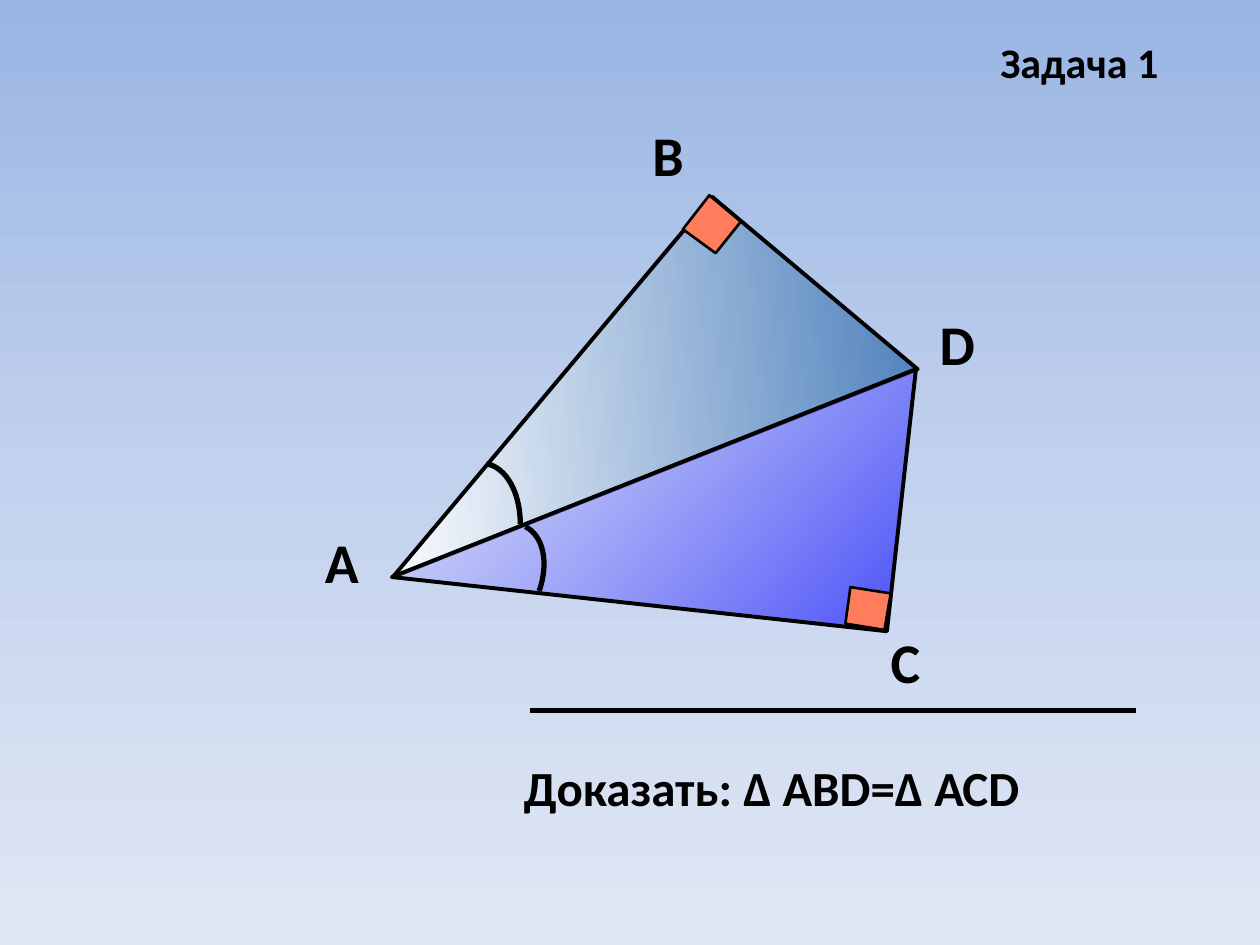
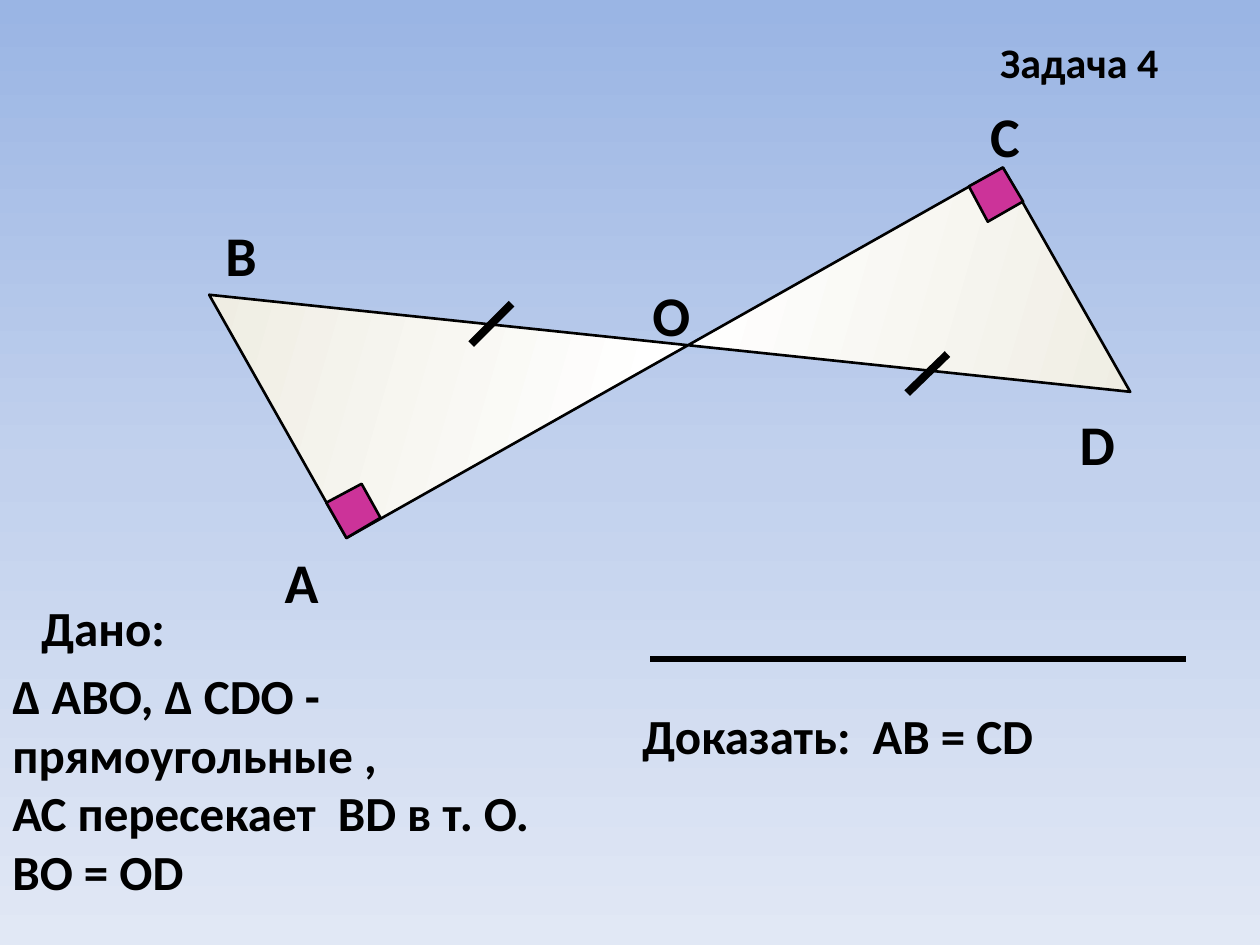
from lxml.etree import SubElement as Sub
from pptx import Presentation
from pptx.dml.color import RGBColor as Rgb
from pptx.enum.shapes import MSO_CONNECTOR as Link, MSO_SHAPE as Form
from pptx.oxml.ns import qn
from pptx.util import Inches, Pt

HUES = {
    "ink": "000000", "white": "FFFFFF", "steel": "4F81BD", "blue": "0000FF",
    "coral": "FF7C5D", "plum": "CC3399", "cream": "EEECE1",
    "sky": "9AB5E4", "mist": "C2D1ED", "pale": "E1E8F5",
}
FONT = "Calibri"
BIG, MID, SMALL = 32, 28, 24

# Grid of 100 columns by 75 rows
COLS, ROWS = 100, 75
deck = Presentation()
deck.slide_width, deck.slide_height = Inches(10), Inches(7.5)
UNIT = deck.slide_width // COLS

# Gradients: angle, then stops of place, colour and opacity in percent
SHADES = {
    "page": (90, [(0, "sky", 100), (50, "mist", 100), (100, "pale", 100)]),
    "upper": (45, [(0, "steel", 100), (100, "white", 100)]),
    "lower": (45, [(0, "white", 51), (100, "blue", 64)]),
    "bow": (16, [(0, "cream", 100), (50, "white", 100), (100, "cream", 100)]),
}


def write(page, text, col, row, wide, high, size=BIG, wrap=False):
    box = page.shapes.add_textbox(*[round(n * UNIT) for n in (col, row, wide, high)])
    frame = box.text_frame
    frame.word_wrap = wrap
    for i, line in enumerate(text.split("\n")):
        para = frame.paragraphs[0] if i == 0 else frame.add_paragraph()
        run = para.add_run()
        run.text = line
        run.font.name, run.font.size, run.font.bold = FONT, Pt(size), True
        run.font.color.rgb = Rgb.from_string(HUES["ink"])


def shade(props, name):
    """Swap the solid fill of a property element for a named gradient."""
    angle, stops = SHADES[name]
    solid = props.find(qn("a:solidFill"))
    grad = props.makeelement(qn("a:gradFill"), {"rotWithShape": "1"})
    props.replace(solid, grad)
    group = Sub(grad, qn("a:gsLst"))
    for place, hue, alpha in stops:
        stop = Sub(group, qn("a:gs"), pos=str(place * 1000))
        tint = Sub(stop, qn("a:srgbClr"), val=HUES[hue])
        if alpha < 100:
            Sub(tint, qn("a:alpha"), val=str(alpha * 1000))
    Sub(grad, qn("a:lin"), ang=str(angle * 60000), scaled="0")


# Angle marks: points along two Bezier curves
curves = [
    [(38.6, 36.8), (40.2, 37.1), (41.3, 39.1), (41.3, 41.6)],
    [(41.7, 41.8), (43.1, 42.5), (43.6, 44.6), (42.8, 46.9)],
]
STEPS = 16
arcs = []
for curve in curves:
    arc = []
    for step in range(STEPS + 1):
        t = step / STEPS
        mix = ((1 - t) ** 3, 3 * t * (1 - t) ** 2, 3 * t * t * (1 - t), t ** 3)
        arc.append([sum(m * p[axis] for m, p in zip(mix, curve)) for axis in (0, 1)])
    arcs.append(arc)

# Outlines: points, fill (None leaves the outline open), line width
# Labels: letter, column, row; lines: two ends, line width
tasks = [
    {
        "title": "Задача 1", "span": 16.9,
        "outlines": [
            ([(31.1, 45.8), (72.7, 29.3), (70.4, 50.1)], "lower", 2.25),
            (arcs[0], None, 3),
            (arcs[1], None, 3),
            ([(56.3, 15.5), (58.8, 17.6), (56.8, 20.1), (54.2, 18.2)], "coral", 1.5),
            ([(67.5, 46.6), (70.7, 47.1), (70.2, 50), (67.1, 49.5)], "coral", 1.5),
        ],
        "labels": [("А", 24.8, 41.4), ("В", 50.8, 9.1), ("С", 69.7, 49.3), ("D", 73.6, 24.1)],
        "lines": [(42.1, 56.4, 90.2, 56.4, 3)],
        "goal": ("Доказать: Δ АВD=Δ АСD", 40.6, 59.6, 41.8, 5.7),
    },
    {
        "title": "Задача 4", "span": 14.7,
        "outlines": [
            ([(27.5, 42.7), (79.6, 13.3), (89.7, 31.1), (16.6, 23.4)], "bow", 1.5),
            ([(25.9, 39.9), (28.7, 38.4), (30.2, 41.1), (27.5, 42.7)], "plum", 1.5),
            ([(76.9, 14.8), (78.4, 17.6), (81.2, 16), (79.6, 13.3)], "plum", 1.5),
        ],
        "labels": [("А", 21.6, 43), ("В", 16.9, 17), ("С", 77.6, 7.6),
                   ("D", 84.7, 32), ("О", 50.8, 21.8)],
        "lines": [(40.6, 24.1, 37.4, 27.3, 4.5), (75.2, 28.1, 72, 31.2, 4.5),
                  (51.6, 52.3, 94.1, 52.3, 3)],
        "goal": ("Доказать:  АВ = СD", 50, 55.5, 34.3, 5.7),
    },
]

pages = []
for task in tasks:
    page = deck.slides.add_slide(deck.slide_layouts[6])
    pages.append(page)
    page.background.fill.solid()
    shade(next(page.element.iter(qn("p:bgPr"))), "page")

    parts = []
    if task is tasks[0]:
        place = [round(n * UNIT) for n in (32.3, 26.9, 39.4, 21.3)]
        upper = page.shapes.add_shape(Form.RIGHT_TRIANGLE, *place)
        upper.rotation = 130
        parts.append((upper, "upper", 2.25))
    for points, fill, width in task["outlines"]:
        spots = [(round(x * UNIT), round(y * UNIT)) for x, y in points]
        pen = page.shapes.build_freeform(*spots[0])
        pen.add_line_segments(spots[1:], close=fill is not None)
        parts.append((pen.convert_to_shape(), fill, width))

    for part, fill, width in parts:
        part.shadow.inherit = False
        part.line.color.rgb = Rgb.from_string(HUES["ink"])
        part.line.width = Pt(width)
        if fill is None:
            part.fill.background()
            continue
        part.fill.solid()
        if fill in SHADES:
            shade(part.element.spPr, fill)
        else:
            part.fill.fore_color.rgb = Rgb.from_string(HUES[fill])

    for *ends, width in task["lines"]:
        line = page.shapes.add_connector(Link.STRAIGHT, *[round(n * UNIT) for n in ends])
        line.line.color.rgb = Rgb.from_string(HUES["ink"])
        line.line.width = Pt(width)
        Sub(line.element.spPr, qn("a:effectLst"))

    for name, col, row in task["labels"]:
        write(page, name, col, row, 5.2, 6.3)
    write(page, task["title"], 78.4, 2.4, task["span"], 5, size=SMALL)
    write(page, *task["goal"], size=MID)

write(pages[1], "Дано:", 2.3, 46.9, 16.4, 5.7, size=MID, wrap=True)
given = "Δ АВО, Δ СDО - прямоугольные ,\nАС пересекает  ВD в т. О.\nВО = ОD"
write(pages[1], given, 0, 52.3, 49.2, 19.9, size=MID, wrap=True)

deck.save("out.pptx")
